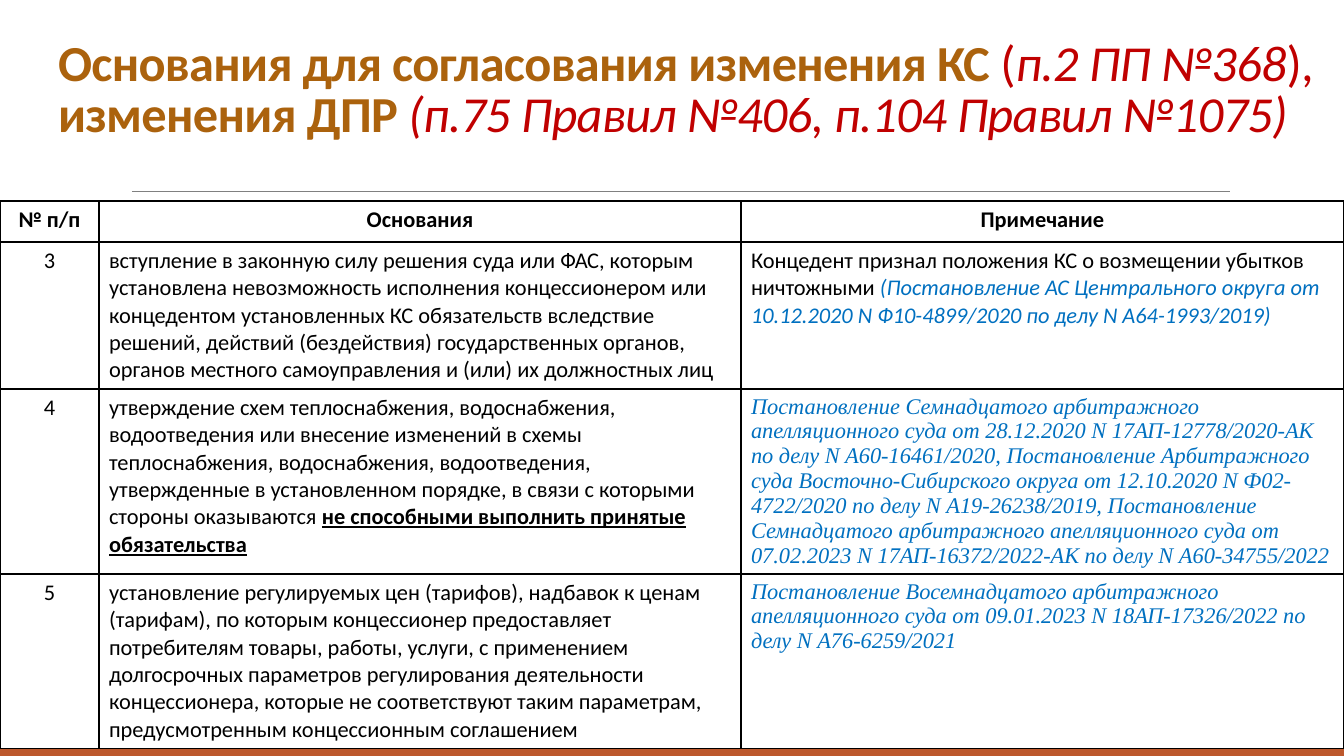
from lxml import etree
from pptx import Presentation
from pptx.dml.color import RGBColor
from pptx.enum.shapes import MSO_CONNECTOR, MSO_SHAPE
from pptx.enum.text import MSO_ANCHOR, MSO_AUTO_SIZE, PP_ALIGN
from pptx.oxml import parse_xml
from pptx.oxml.ns import nsdecls, qn
from pptx.util import Pt

EMU_PER_PX = 914400 / 100.8
WIDTH, HEIGHT = 1344, 756

BLACK, WHITE, GREY = "000000", "FFFFFF", "808080"
BROWN, RED, BLUE = "AB620D", "C00000", "0070C0"
RUST, ORANGE = "BD582C", "E48312"
SANS, SERIF = "Calibri", "Times New Roman"

COLUMN_WIDTHS = [99, 642, 603]
ROW_HEIGHTS = [41, 147, 185, 174]

# A run is a text and its differences from the paragraph font.
HEADING = {"bold": True}
CASE = {"color": BLUE, "italic": True}
SERIF_CASE = {"name": SERIF, **CASE}
TITLE_MAIN = {"color": BROWN, "bold": True}
TITLE_NOTE = {"italic": True}

TITLE_RUNS = [
    ("Основания для согласования изменения КС ", TITLE_MAIN),
    ("(", {}),
    ("п.2 ПП №368", TITLE_NOTE),
    ("), ", {}),
    ("изменения ДПР ", TITLE_MAIN),
    ("(п.75 Правил №406, п.104 Правил №1075)", TITLE_NOTE),
]

ROWS = [
    [[("№ п/п", HEADING)], [("Основания", HEADING)], [("Примечание", HEADING)]],
    [
        [("3", {})],
        [("вступление в законную силу решения суда или ФАС, которым установлена "
          "невозможность исполнения концессионером или концедентом установленных КС "
          "обязательств вследствие решений, действий (бездействия) государственных "
          "органов, органов местного самоуправления и (или) их должностных лиц", {})],
        [("Концедент признал положения КС о возмещении убытков ничтожными ", {}),
         ("(Постановление АС Центрального округа от 10.12.2020 N Ф10-4899/2020 "
          "по делу N А64-1993/2019)", CASE)],
    ],
    [
        [("4", {})],
        [("утверждение схем теплоснабжения, водоснабжения, водоотведения или внесение "
          "изменений в схемы теплоснабжения, водоснабжения, водоотведения, утвержденные "
          "в установленном порядке, в связи с которыми стороны оказываются ", {}),
         ("не способными выполнить принятые обязательства",
          {"bold": True, "underline": True})],
        [("Постановление Семнадцатого арбитражного апелляционного суда от 28.12.2020 "
          "N 17АП-12778/2020-АК по делу N А60-16461/2020, Постановление Арбитражного "
          "суда Восточно-Сибирского округа от 12.10.2020 N Ф02-4722/2020 по делу "
          "N А19-26238/2019, Постановление Семнадцатого арбитражного апелляционного "
          "суда от 07.02.2023 N 17АП-16372/2022-АК по делу N А60-34755/2022",
          SERIF_CASE)],
    ],
    [
        [("5", {})],
        [("установление регулируемых цен (тарифов), надбавок к ценам (тарифам), по "
          "которым концессионер предоставляет потребителям товары, работы, услуги, с "
          "применением долгосрочных параметров регулирования деятельности "
          "концессионера, которые не соответствуют таким параметрам, предусмотренным "
          "концессионным соглашением", {})],
        [("Постановление Восемнадцатого арбитражного апелляционного суда от 09.01.2023 "
          "N 18АП-17326/2022 по делу N А76-6259/2021", SERIF_CASE)],
    ],
]


def px(n):
    return round(n * EMU_PER_PX)


def rgb(color):
    return RGBColor.from_string(color)


def set_font(font, color=None, **props):
    if color:
        font.color.rgb = rgb(color)
    for name, value in props.items():
        setattr(font, name, value)


def add_runs(p, runs):
    for text, style in runs:
        r = p.add_run()
        r.text = text
        set_font(r.font, **style)


def add_bar(s, y, h, color):
    sp = s.shapes.add_shape(MSO_SHAPE.RECTANGLE, 0, px(y), px(WIDTH), px(h))
    sp.shadow.inherit = False
    sp.fill.solid()
    sp.fill.fore_color.rgb = rgb(color)
    sp.line.fill.background()


def add_rule(s, x1, x2, y):
    line = s.shapes.add_connector(MSO_CONNECTOR.STRAIGHT, px(x1), px(y), px(x2), px(y))
    line.line.color.rgb = rgb(GREY)
    line.line.width = Pt(0.5)
    etree.SubElement(line._element.spPr, qn("a:effectLst"))


def fill_title(sp):
    sp.left, sp.top, sp.width, sp.height = px(48), px(31), px(1280), px(117)
    tf = sp.text_frame
    tf.word_wrap = True
    tf.auto_size = MSO_AUTO_SIZE.NONE
    tf.vertical_anchor = MSO_ANCHOR.BOTTOM
    p = tf.paragraphs[0]
    p.alignment = PP_ALIGN.LEFT
    p.line_spacing = 0.85
    set_font(p.font, RED, name=SANS, size=Pt(36), bold=False)
    add_runs(p, TITLE_RUNS)
    for r in p.runs:
        r.font._element.set("spc", "-50")


def set_borders(cell):
    tc_pr = cell._tc.get_or_add_tcPr()
    for i, side in enumerate(("lnL", "lnR", "lnT", "lnB")):
        tc_pr.insert(i, parse_xml(
            f'<a:{side} {nsdecls("a")} w="{Pt(1)}"><a:solidFill>'
            f'<a:srgbClr val="{BLACK}"/></a:solidFill></a:{side}>'))


def fill_cell(cell, runs, centered):
    cell.fill.solid()
    cell.fill.fore_color.rgb = rgb(WHITE)
    set_borders(cell)
    p = cell.text_frame.paragraphs[0]
    p.alignment = PP_ALIGN.CENTER if centered else PP_ALIGN.LEFT
    set_font(p.font, BLACK, name=SANS, size=Pt(16))
    add_runs(p, runs)


def add_grounds_table(s):
    table = s.shapes.add_table(len(ROWS), len(COLUMN_WIDTHS), 0, px(201),
                               px(WIDTH), px(sum(ROW_HEIGHTS))).table
    table.first_row = table.horz_banding = False
    for column, width in zip(table.columns, COLUMN_WIDTHS):
        column.width = px(width)
    for i, (row, height) in enumerate(zip(table.rows, ROW_HEIGHTS)):
        row.height = px(height)
        for j, (cell, runs) in enumerate(zip(row.cells, ROWS[i])):
            fill_cell(cell, runs, centered=i == 0 or j == 0)


def main():
    prs = Presentation()
    prs.slide_width, prs.slide_height = px(WIDTH), px(HEIGHT)
    s = prs.slides.add_slide(prs.slide_layouts[5])
    fill_title(s.shapes.title)
    add_bar(s, 706, 50, RUST)
    add_bar(s, 699, 7, ORANGE)
    add_rule(s, 132, 1230, 191)
    add_grounds_table(s)
    prs.save("out.pptx")


if __name__ == "__main__":
    main()
